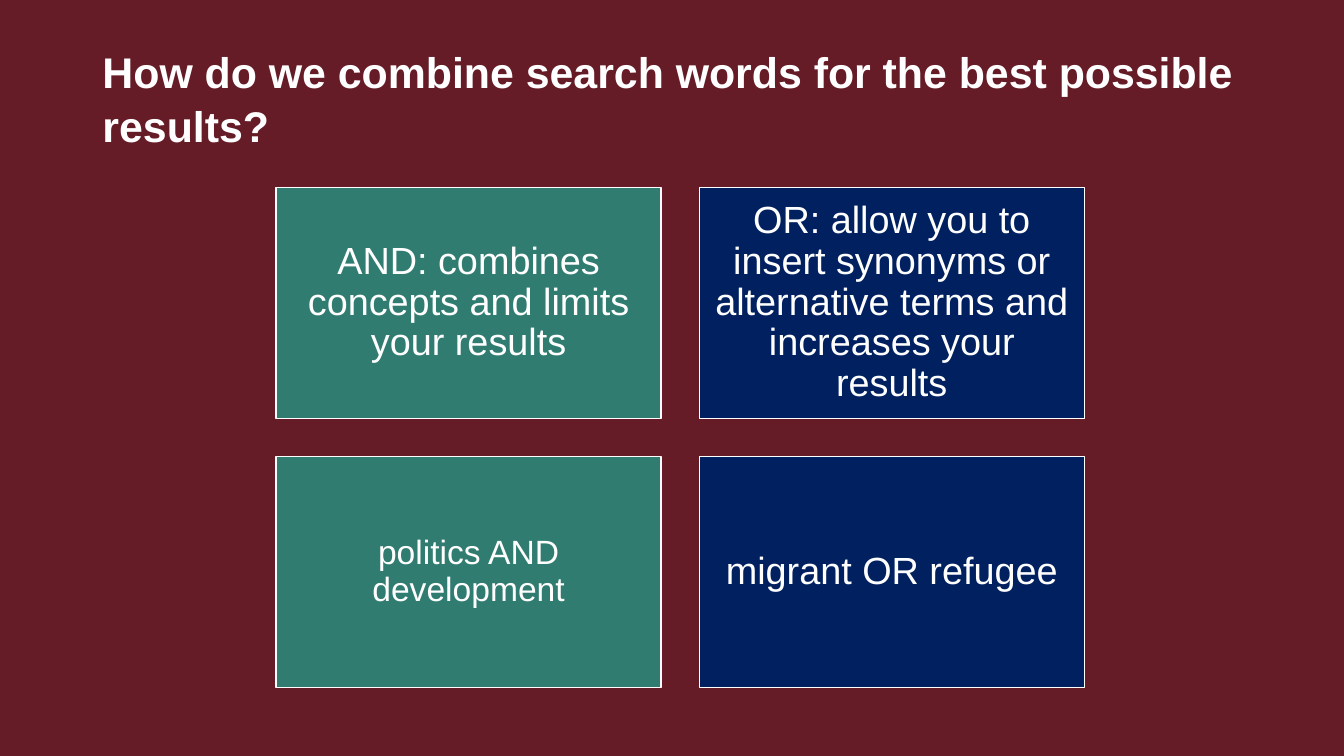
from dataclasses import dataclass

import pptx
import pptx.dml.color
import pptx.enum.shapes
import pptx.enum.text
import pptx.util

Pt = pptx.util.Pt
RGB = pptx.dml.color.RGBColor.from_string
ALIGN = pptx.enum.text.PP_ALIGN


@dataclass(frozen=True)
class Theme:
    font: str = "Arial"
    background: str = "651C27"
    text: str = "FFFFFF"
    narrowing: str = "307C71"
    widening: str = "002060"
    title_size: float = 30.6
    card_size: float = 27
    small_card_size: float = 24


class SlideBuilder:
    def __init__(self, slide, theme):
        self.slide = slide
        self.theme = theme

    def background(self):
        fill = self.slide.background.fill
        fill.solid()
        fill.fore_color.rgb = RGB(self.theme.background)

    def set_wording(self, frame, wording, size, align, spacing, bold=False):
        """Fill a text frame with one vertically centred paragraph."""
        frame.word_wrap = True
        frame.auto_size = pptx.enum.text.MSO_AUTO_SIZE.NONE
        frame.vertical_anchor = pptx.enum.text.MSO_ANCHOR.MIDDLE
        paragraph = frame.paragraphs[0]
        paragraph.alignment = align
        paragraph.line_spacing = spacing
        run = paragraph.add_run()
        run.text = wording
        run.font.name = self.theme.font
        run.font.size = Pt(size)
        run.font.bold = bold
        run.font.color.rgb = RGB(self.theme.text)

    def title(self, wording, left, top, width, height):
        heading = self.slide.shapes.title
        heading.left, heading.top = Pt(left), Pt(top)
        heading.width, heading.height = Pt(width), Pt(height)
        self.set_wording(heading.text_frame, wording, self.theme.title_size,
                         ALIGN.LEFT, 1.05, bold=True)

    def card(self, wording, left, top, width, height, color, size):
        card = self.slide.shapes.add_shape(
            pptx.enum.shapes.MSO_SHAPE.RECTANGLE,
            Pt(left), Pt(top), Pt(width), Pt(height))
        card.shadow.inherit = False
        card.fill.solid()
        card.fill.fore_color.rgb = RGB(color)
        card.line.color.rgb = RGB(self.theme.text)
        card.line.width = Pt(1)
        frame = card.text_frame
        frame.margin_left = frame.margin_right = Pt(8)
        frame.margin_top = frame.margin_bottom = Pt(8)
        self.set_wording(frame, wording, size, ALIGN.CENTER, 0.9)


def main():
    theme = Theme()
    deck = pptx.Presentation()
    deck.slide_width, deck.slide_height = Pt(960), Pt(540)
    title_only = deck.slide_layouts[5]
    builder = SlideBuilder(deck.slides.add_slide(title_only), theme)

    builder.background()
    builder.title("How do we combine search words for the best possible results?",
                  66, 26.6, 827.5, 85)

    card_width, card_height, gap = 275, 165, 27.3
    grid_left, grid_top = 197.2, 133.8
    column_colors = (theme.narrowing, theme.widening)
    card_rows = (
        (("AND: combines concepts and limits your results", theme.card_size),
         ("OR: allow you to insert synonyms or alternative terms "
          "and increases your results", theme.card_size)),
        (("politics AND development", theme.small_card_size),
         ("migrant OR refugee", theme.card_size)),
    )
    for row, cards in enumerate(card_rows):
        for column, (wording, size) in enumerate(cards):
            builder.card(wording,
                         grid_left + column * (card_width + gap),
                         grid_top + row * (card_height + gap),
                         card_width, card_height, column_colors[column], size)

    deck.save("out.pptx")


if __name__ == "__main__":
    main()
